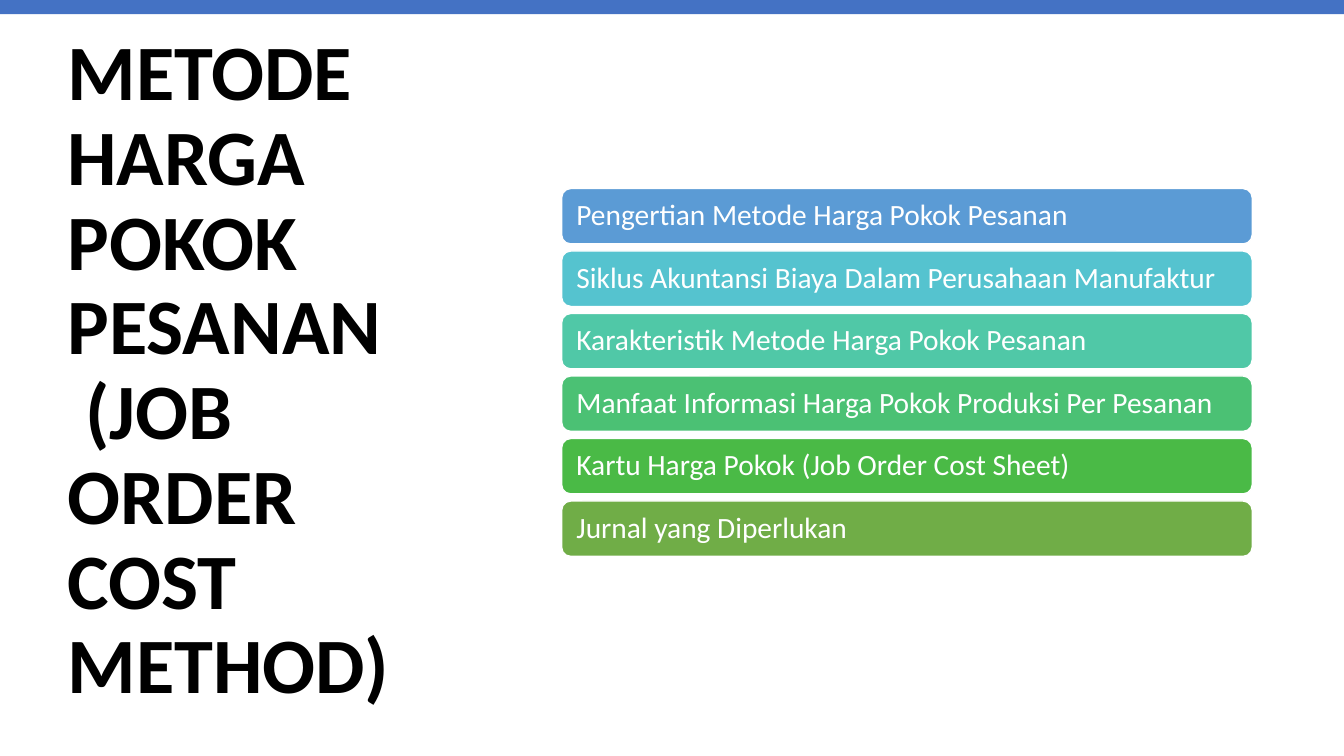
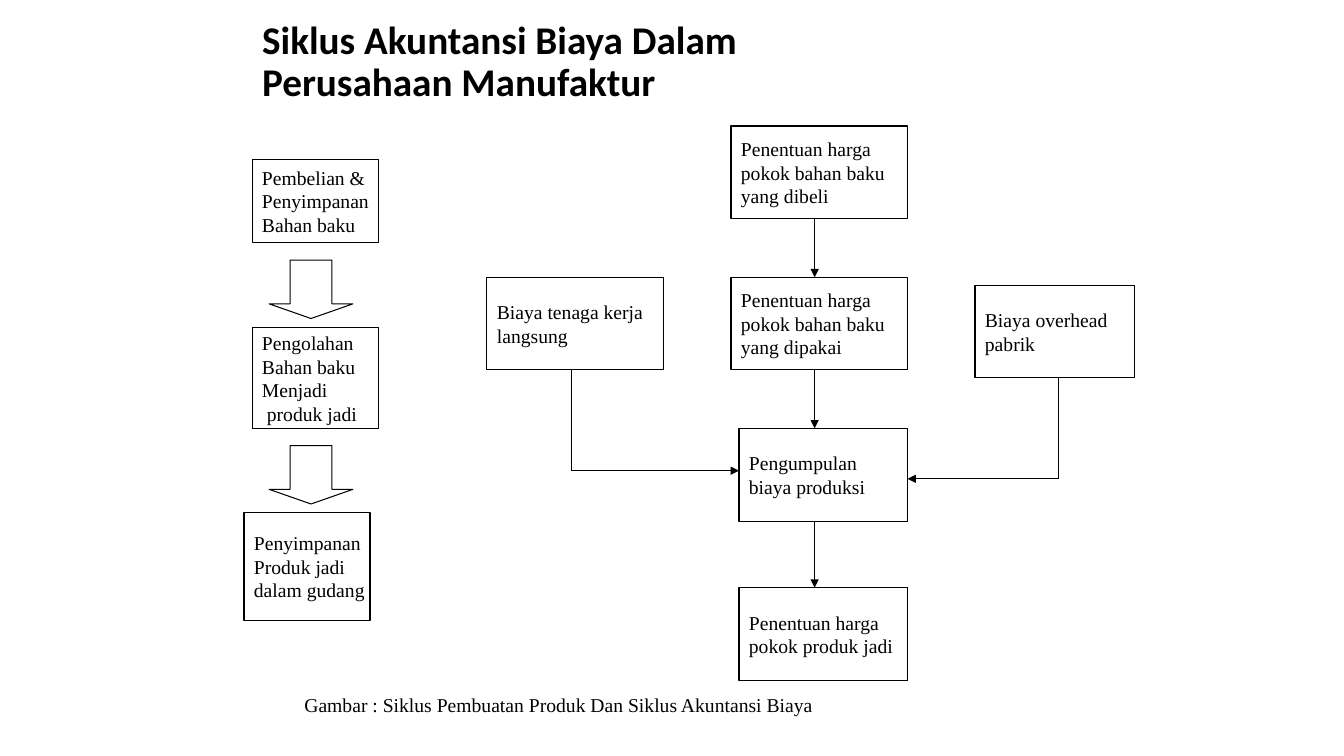
from lxml.etree import SubElement
from pptx import Presentation
from pptx.dml.color import RGBColor
from pptx.enum.shapes import MSO_CONNECTOR as CONNECTOR, MSO_SHAPE as SHAPE
from pptx.enum.text import MSO_ANCHOR as ANCHOR, MSO_AUTO_SIZE as AUTO_SIZE, PP_ALIGN as ALIGN
from pptx.oxml.ns import qn
from pptx.util import Inches, Pt

WIDTH, HEIGHT = 13.33, 7.5
SANS, SERIF = "Calibri", "Times New Roman"
BLACK = RGBColor(0x00, 0x00, 0x00)
WHITE = RGBColor(0xFF, 0xFF, 0xFF)
BLUE = RGBColor(0x44, 0x72, 0xC4)
TOPICS = [
    ("Pengertian Metode Harga Pokok Pesanan", RGBColor(0x5B, 0x9B, 0xD5)),
    ("Siklus Akuntansi Biaya Dalam Perusahaan Manufaktur", RGBColor(0x55, 0xC3, 0xCF)),
    ("Karakteristik Metode Harga Pokok Pesanan", RGBColor(0x50, 0xC8, 0xA7)),
    ("Manfaat Informasi Harga Pokok Produksi Per Pesanan", RGBColor(0x4B, 0xC1, 0x74)),
    ("Kartu Harga Pokok (Job Order Cost Sheet)", RGBColor(0x4A, 0xBA, 0x46)),
    ("Jurnal yang Diperlukan", RGBColor(0x70, 0xAD, 0x47)),
]


def write_text(shape, lines, font=SERIF, size=14, color=BLACK, bold=False,
               anchor=ANCHOR.MIDDLE, spacing=1.0, left=0.1, right=0.1):
    """Write one left-aligned paragraph for each line."""
    frame = shape.text_frame
    frame.word_wrap = True
    frame.auto_size = AUTO_SIZE.NONE
    frame.vertical_anchor = anchor
    frame.margin_left, frame.margin_right = Inches(left), Inches(right)
    frame.margin_top = frame.margin_bottom = Inches(0.05)
    for index, line in enumerate(lines):
        paragraph = frame.paragraphs[0] if index == 0 else frame.add_paragraph()
        paragraph.text = line
        paragraph.alignment = ALIGN.LEFT
        paragraph.line_spacing = spacing
        paragraph.font.name = font
        paragraph.font.size = Pt(size)
        paragraph.font.bold = bold
        paragraph.font.color.rgb = color


def add_box(slide, kind, box, fill=None, line=None, line_width=0.75):
    shape = slide.shapes.add_shape(kind, *map(Inches, box))
    shape.shadow.inherit = False
    if fill is None:
        shape.fill.background()
    else:
        shape.fill.solid()
        shape.fill.fore_color.rgb = fill
    if line is None:
        shape.line.fill.background()
    else:
        shape.line.color.rgb = line
        shape.line.width = Pt(line_width)
    return shape


def add_line(slide, start, end, arrow=False):
    line = slide.shapes.add_connector(CONNECTOR.STRAIGHT, *map(Inches, start + end))
    line.line.color.rgb = BLACK
    line.line.width = Pt(0.75)
    if arrow:
        SubElement(line.line._get_or_add_ln(), qn("a:tailEnd"), type="triangle")
    SubElement(line._element.spPr, qn("a:effectLst"))


def add_titled_slide(presentation, title, box, size):
    """Add a title-only slide with the shared title style."""
    slide = presentation.slides.add_slide(presentation.slide_layouts[5])
    shape = slide.shapes.title
    shape.left, shape.top, shape.width, shape.height = map(Inches, box)
    write_text(shape, [title], font=SANS, size=size, bold=True, spacing=0.9)
    return slide


def add_topic_list(slide, left, top, width, row_height=0.55, pitch=0.62):
    for index, (topic, color) in enumerate(TOPICS):
        row = add_box(slide, SHAPE.ROUNDED_RECTANGLE,
                      (left, top + index * pitch, width, row_height), color, WHITE, 1)
        write_text(row, [topic], font=SANS, size=21, color=WHITE, spacing=0.9, left=0.12)


def add_step(slide, box, lines):
    write_text(add_box(slide, SHAPE.RECTANGLE, box, line=BLACK), lines, right=0)


def add_product_cycle(slide, left, top):
    """Production steps with block arrows between them."""
    steps = [
        (0.08, 0, 0.83, ["Pembelian &", "Penyimpanan", "Bahan baku"]),
        (0.08, 1.67, 1, ["Pengolahan", "Bahan baku", "Menjadi", " produk jadi"]),
        (0, 3.5, 1.08, ["Penyimpanan", "Produk jadi", "dalam gudang"]),
    ]
    for x, y, height, lines in steps:
        add_step(slide, (left + x, top + y, 1.25, height), lines)
    for y in (1, 2.84):
        arrow = add_box(slide, SHAPE.DOWN_ARROW, (left + 0.25, top + y, 0.83, 0.58), line=BLACK)
        arrow.adjustments[0], arrow.adjustments[1] = 0.5, 0.25


def add_cost_cycle(slide, left, top):
    """Cost boxes joined by straight and bent arrows."""
    box_height = 0.92
    boxes = [
        (2.42, 0, 1.75, ["Penentuan harga", "pokok bahan baku", "yang dibeli"]),
        (2.42, 1.5, 1.75, ["Penentuan harga", "pokok bahan baku", "yang dipakai"]),
        (2.5, 3, 1.67, ["Pengumpulan", "biaya produksi"]),
        (2.5, 4.58, 1.67, ["Penentuan harga", "pokok produk jadi"]),
        (0, 1.5, 1.75, ["Biaya tenaga kerja", "langsung"]),
        (4.84, 1.58, 1.58, ["Biaya overhead", "pabrik"]),
    ]
    for x, y, width, lines in boxes:
        add_step(slide, (left + x, top + y, width, box_height), lines)

    # Downward flow through the middle column
    center = left + 3.25
    column = boxes[:4]
    for upper, lower in zip(column, column[1:]):
        add_line(slide, (center, top + upper[1] + box_height), (center, top + lower[1]), True)

    # Side costs drop one inch, then turn into the collecting box
    for x, y, target in ((0.84, 1.5, 2.5), (5.67, 1.58, 4.17)):
        start = top + y + box_height
        corner = (left + x, start + 1)
        add_line(slide, (left + x, start), corner)
        add_line(slide, corner, (left + target, start + 1), True)


def add_caption(slide, box, text):
    write_text(slide.shapes.add_textbox(*map(Inches, box)), [text], anchor=ANCHOR.TOP)


def build_topics_slide(presentation):
    slide = add_titled_slide(
        presentation, "METODE HARGA POKOK PESANAN\v (JOB ORDER COST METHOD)",
        (0.57, 0.68, 4.16, 6.02), 56)
    add_box(slide, SHAPE.RECTANGLE, (0, 0, WIDTH, 0.14), BLUE)
    add_topic_list(slide, 5.57, 1.87, 6.85)


def build_cycle_slide(presentation):
    slide = add_titled_slide(
        presentation, "Siklus Akuntansi Biaya Dalam \vPerusahaan Manufaktur",
        (2.5, 0, 8.5, 1.25), 28)
    add_product_cycle(slide, 2.42, 1.58)
    add_cost_cycle(slide, 4.83, 1.25)
    add_caption(slide, (2.92, 6.83, 5.58, 0.33),
                "Gambar : Siklus Pembuatan Produk Dan Siklus Akuntansi Biaya")


def main():
    presentation = Presentation()
    presentation.slide_width, presentation.slide_height = Inches(WIDTH), Inches(HEIGHT)
    build_topics_slide(presentation)
    build_cycle_slide(presentation)
    presentation.save("out.pptx")


if __name__ == "__main__":
    main()
